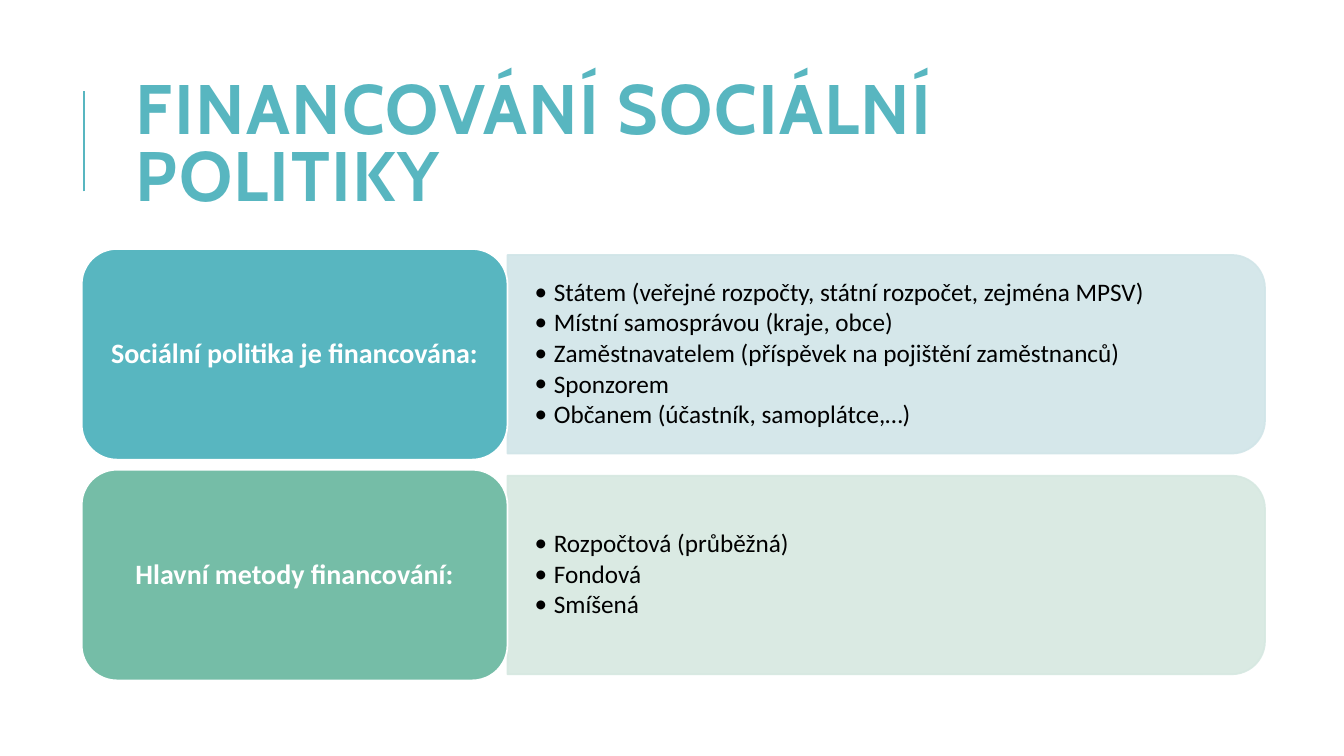
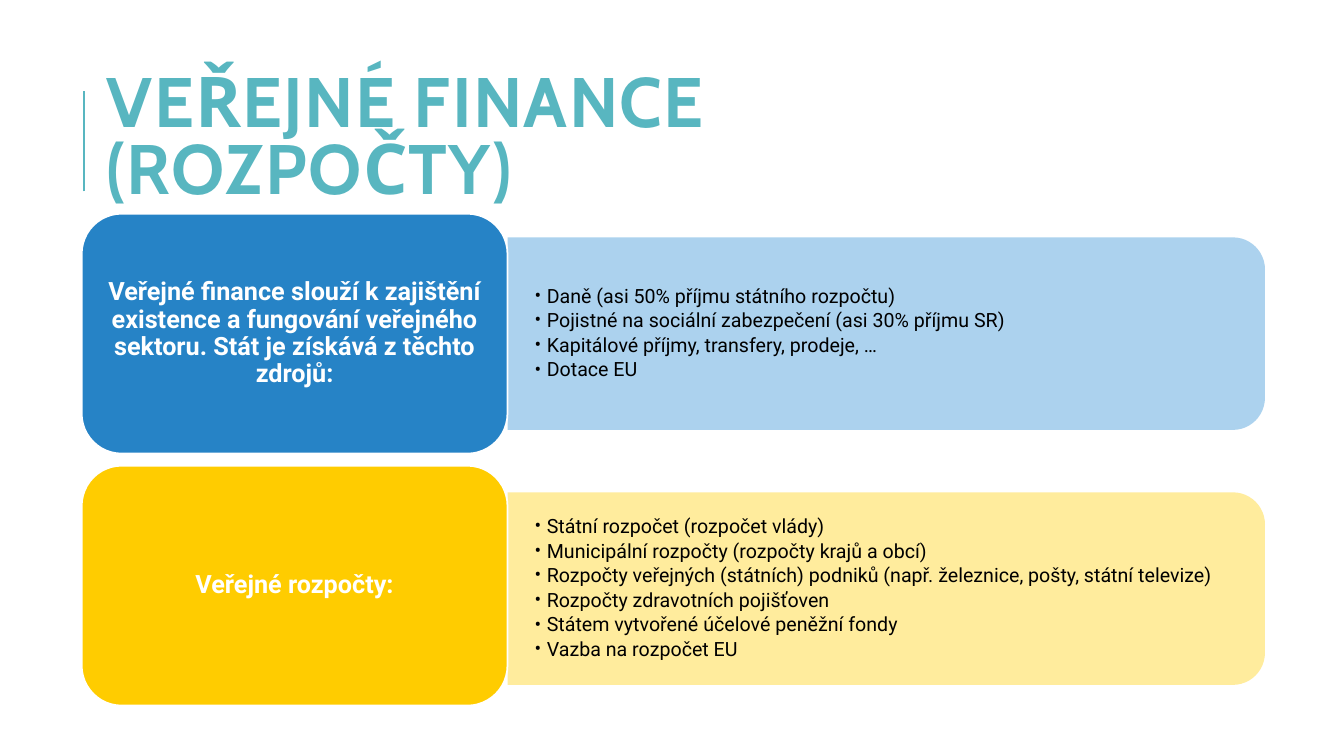
from dataclasses import dataclass
from typing import Any

from lxml import etree
from pptx import Presentation
from pptx.dml.color import RGBColor
from pptx.enum.shapes import MSO_CONNECTOR, MSO_SHAPE
from pptx.enum.text import MSO_ANCHOR, PP_ALIGN
from pptx.oxml.ns import qn
from pptx.util import Emu, Inches, Pt

STRAIGHT = MSO_CONNECTOR.STRAIGHT
CARD, PANEL = MSO_SHAPE.ROUNDED_RECTANGLE, MSO_SHAPE.ROUND_2_SAME_RECTANGLE
MIDDLE = MSO_ANCHOR.MIDDLE
LEFT, CENTER = PP_ALIGN.LEFT, PP_ALIGN.CENTER

W, H = Inches(13.33), Inches(7.5)
COLORS = {
    "teal": "58B6C0", "teal_tint": "D1E5E8",
    "green": "75BDA7", "green_tint": "D6E8E1",
    "blue": "2683C6", "blue_tint": "A3CEED",
    "yellow": "FFCC00", "yellow_tint": "FFEA93",
    "white": "FFFFFF", "black": "000000",
}
CARD_X, CARD_W, PANEL_W = 6.08, 31.68, 56.36
RULE_X, RULE_TOP, RULE_BOTTOM = 6.23, 12, 25.33
EDGE = 1.25
TITLE_FONT = {"name": "Cabin", "size": Pt(50), "bold": True}
LABEL_MARGINS = {"margin_left": Inches(0.08), "margin_right": Inches(0.08),
                 "margin_top": Inches(0.04), "margin_bottom": Inches(0.04)}
LIST_MARGINS = {"margin_left": Inches(0.27), "margin_right": Inches(0.27),
                "margin_top": Inches(0.14), "margin_bottom": Inches(0.14)}


@dataclass(frozen=True)
class Row:
    """A coloured label card with its list panel."""
    color: str
    label: str
    items: tuple[str, ...]
    shift: float = 0


@dataclass(frozen=True)
class Page:
    """One slide, with lengths in percent of the slide's width or height."""
    title: str
    title_box: tuple[float, float, float, float]
    top: float
    card_h: float
    pitch: float
    panel_h: float
    font: str
    label_pt: int
    item_pt: int
    indent: float
    outlined: bool
    rows: tuple[Row, ...]


PAGES = (
    Page("FINANCOVÁNÍ SOCIÁLNÍ POLITIKY", (9.38, 15.2, 84.68, 8.67),
         32.93, 27.87, 29.2, 26.27, "Calibri", 20, 18, 0.19, True, (
             Row("teal", "Sociální politika je financována:", (
                 "Státem (veřejné rozpočty, státní rozpočet, zejména MPSV)",
                 "Místní samosprávou (kraje, obce)",
                 "Zaměstnavatelem (příspěvek na pojištění zaměstnanců)",
                 "Sponzorem",
                 "Občanem (účastník, samoplátce,…)")),
             Row("green", "Hlavní metody financování:", (
                 "Rozpočtová (průběžná)", "Fondová", "Smíšená")))),
    Page("VEŘEJNÉ FINANCE (ROZPOČTY)", (7.2, 14.53, 61.88, 8.27),
         28.27, 31.73, 33.33, 25.47, "Roboto", 18, 14, 0.12, False, (
             Row("blue", "Veřejné finance slouží k zajištění existence a fungování "
                 "veřejného sektoru. Stát je získává z těchto zdrojů:", (
                     "Daně (asi 50% příjmu státního rozpočtu)",
                     "Pojistné na sociální zabezpečení (asi 30% příjmu SR)",
                     "Kapitálové příjmy, transfery, prodeje, …",
                     "Dotace EU")),
             Row("yellow", "Veřejné rozpočty:", (
                 "Státní rozpočet (rozpočet vlády)",
                 "Municipální rozpočty (rozpočty krajů a obcí)",
                 "Rozpočty veřejných (státních) podniků "
                 "(např. železnice, pošty, státní televize)",
                 "Rozpočty zdravotních pojišťoven",
                 "Státem vytvořené účelové peněžní fondy",
                 "Vazba na rozpočet EU"), 0.4))),
)


def px(share: float) -> Emu:
    """Turn a percentage of the slide's width into a length."""
    return Emu(round(W * share / 100))


def py(share: float) -> Emu:
    """Turn a percentage of the slide's height into a length."""
    return Emu(round(H * share / 100))


def rgb(name: str) -> RGBColor:
    """Look up a palette colour."""
    return RGBColor.from_string(COLORS[name])


def apply(target: Any, values: dict[str, Any]) -> None:
    """Set every attribute given in a dict of format values."""
    for name, value in values.items():
        setattr(target, name, value)


def set_alpha(sp: Any, percent: int) -> None:
    """Make the fill and line of a shape partly transparent."""
    for clr in sp._element.spPr.iter(qn("a:srgbClr")):
        etree.SubElement(clr, qn("a:alpha")).set("val", str(percent * 1000))


def write(tf: Any, lines: tuple[str, ...], font: dict[str, Any], color: str,
          para: dict[str, Any], margins: dict[str, Any]) -> None:
    """Fill a text frame with equally formatted paragraphs."""
    apply(tf, {"word_wrap": True, "vertical_anchor": MIDDLE, **margins})
    for i, line in enumerate(lines):
        p = tf.add_paragraph() if i else tf.paragraphs[0]
        apply(p, para)
        r = p.add_run()
        r.text = line
        apply(r.font, font)
        r.font.color.rgb = rgb(color)


def add_bullets(tf: Any, indent: float, font: str) -> None:
    """Give every paragraph a hanging bullet in the text's font."""
    for p in tf.paragraphs:
        pPr = p._p.get_or_add_pPr()
        pPr.set("marL", str(Inches(indent)))
        pPr.set("indent", str(-Inches(indent)))
        etree.SubElement(pPr, qn("a:buFont")).set("typeface", font)
        etree.SubElement(pPr, qn("a:buChar")).set("char", "•")


def add_shape(s: Any, kind: Any, box: tuple[int, ...], color: str, line: str | None) -> Any:
    """Draw a filled shape with an optional outline."""
    sp = s.shapes.add_shape(kind, *box)
    sp.shadow.inherit = False
    sp.fill.solid()
    sp.fill.fore_color.rgb = rgb(color)
    if line:
        sp.line.color.rgb = rgb(line)
        sp.line.width = Pt(EDGE)
    else:
        sp.line.fill.background()
    return sp


def add_title(s: Any, page: Page) -> None:
    """Draw the title and the rule beside it."""
    rule = s.shapes.add_connector(STRAIGHT, px(RULE_X), py(RULE_BOTTOM), px(RULE_X), py(RULE_TOP))
    rule.line.color.rgb = rgb("teal")
    rule.line.width = Pt(1.5)
    etree.SubElement(rule._element.spPr, qn("a:effectLst"))
    x, y, w, h = page.title_box
    tf = s.shapes.add_textbox(px(x), py(y), px(w), py(h)).text_frame
    write(tf, (page.title,), TITLE_FONT, "teal", {"line_spacing": 0.8}, {})
    tf.paragraphs[0].runs[0]._r.get_or_add_rPr().set("spc", "100")


def add_row(s: Any, page: Page, row: Row, top: float) -> None:
    """Draw one list panel and the card to its left."""
    x, w, h = px(CARD_X + CARD_W), px(PANEL_W), py(page.panel_h)
    y = py(top + (page.card_h - page.panel_h) / 2 + row.shift)
    tint = f"{row.color}_tint"
    turned = (x + (w - h) // 2, y + (h - w) // 2, h, w)
    panel = add_shape(s, PANEL, turned, tint, tint if page.outlined else None)
    panel.rotation = 90
    set_alpha(panel, 90)
    tf = s.shapes.add_textbox(x, y, w, h).text_frame
    write(tf, row.items, {"name": page.font, "size": Pt(page.item_pt)}, "black",
          {"alignment": LEFT, "line_spacing": 0.9, "space_after": Pt(2.4)}, LIST_MARGINS)
    add_bullets(tf, page.indent, page.font)
    box = (px(CARD_X), py(top), px(CARD_W), py(page.card_h))
    card = add_shape(s, CARD, box, row.color, "white")
    write(card.text_frame, (row.label,),
          {"name": page.font, "size": Pt(page.label_pt), "bold": True}, "white",
          {"alignment": CENTER, "line_spacing": 0.9}, LABEL_MARGINS)


def main() -> None:
    """Build and save the presentation."""
    prs = Presentation()
    apply(prs, {"slide_width": W, "slide_height": H})
    for page in PAGES:
        s = prs.slides.add_slide(prs.slide_layouts[6])
        add_title(s, page)
        for i, row in enumerate(page.rows):
            add_row(s, page, row, page.top + i * page.pitch)
    prs.save("out.pptx")


if __name__ == "__main__":
    main()
